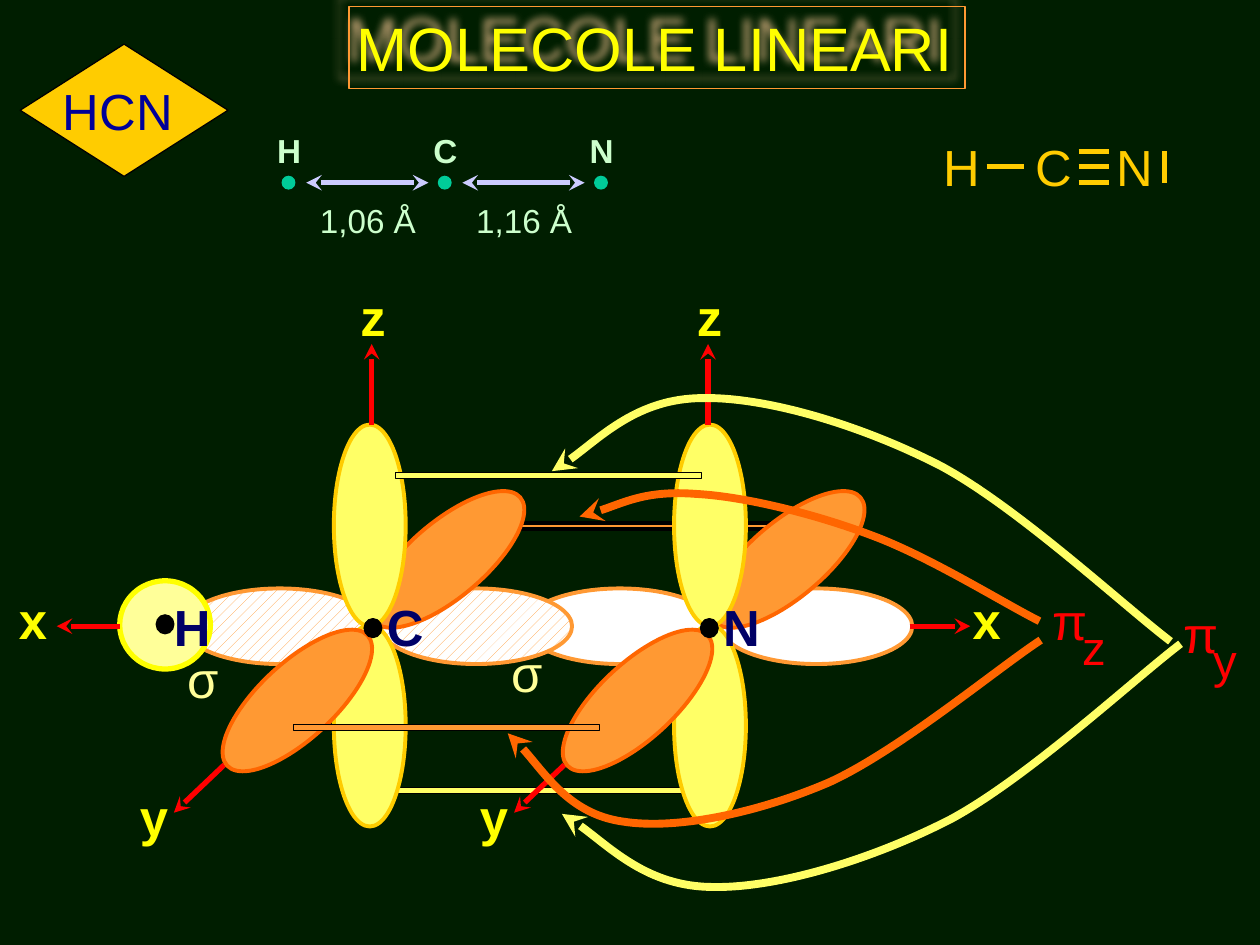
from lxml import etree
from pptx import Presentation
from pptx.dml.color import RGBColor
from pptx.enum.dml import MSO_PATTERN
from pptx.enum.shapes import MSO_CONNECTOR, MSO_SHAPE
from pptx.enum.text import MSO_AUTO_SIZE
from pptx.oxml.ns import qn
from pptx.util import Inches, Pt

RECTANGLE = MSO_SHAPE.RECTANGLE
OVAL = MSO_SHAPE.OVAL
DIAMOND = MSO_SHAPE.FLOWCHART_DECISION
STRAIGHT = MSO_CONNECTOR.STRAIGHT
HATCH = MSO_PATTERN.DASHED_UPWARD_DIAGONAL
GROW = MSO_AUTO_SIZE.SHAPE_TO_FIT_TEXT

# The slide is a grid of 100 columns by 75 rows, all lengths are in cells
COLUMNS, ROWS = 100, 75
YELLOW, GOLD, PALE, LEMON = "FFFF00", "FFCC00", "FFFF66", "FFFF99"
ORANGE, DEEP_ORANGE, RED = "FF9933", "FF6600", "FF0000"
BLACK, WHITE, NAVY, MINT = "000000", "FFFFFF", "000066", "CCFFCC"

# Curve points relative to the arrowhead: start, then three per segment
OUTER_ARC = [(0, 0), (2, 1), (6.8, 5.8), (12, 5.8), (17.1, 5.9), (24.7, 3.6),
             (30.9, 0.4), (37, -2.9), (45.3, -10.6), (49.1, -13.5)]
INNER_LOWER_ARC = [(0, 0), (1.5, 1.2), (4.9, 6.4), (9.1, 7), (13.4, 7.7),
                   (19.9, 6.3), (25.5, 3.9), (31, 1.4), (38.8, -5.1), (42.3, -7.4)]
INNER_UPPER_ARC = [(0, 0), (1.5, -0.3), (5.3, -2.1), (9.2, -1.8), (13.1, -1.6),
                   (18.7, -0.2), (23.2, 1.5), (27.8, 3.2), (33.7, 6.9), (36.5, 8.3)]


def cells(*values):
    return [Inches(value / 10) for value in values]


def color(hex_text):
    return RGBColor.from_string(hex_text)


def set_line(shape, line_color, width, head=False, tail=False):
    shape.line.color.rgb = color(line_color)
    shape.line.width = Pt(width)
    outline = shape.element.spPr.find(qn("a:ln"))
    for present, tag in ((head, "a:headEnd"), (tail, "a:tailEnd")):
        if present:
            etree.SubElement(outline, qn(tag), type="stealth")


def add_shape(slide, kind, box, fill, line_color, width=0.75, rotation=0, hatch=None):
    shape = slide.shapes.add_shape(kind, *cells(*box))
    shape.rotation = rotation
    if hatch:
        shape.fill.patterned()
        shape.fill.pattern = HATCH
        shape.fill.fore_color.rgb = color(hatch)
        shape.fill.back_color.rgb = color(fill)
    else:
        shape.fill.solid()
        shape.fill.fore_color.rgb = color(fill)
    set_line(shape, line_color, width)
    shape.shadow.inherit = False
    return shape


def add_line(slide, start, end, line_color, head=False, tail=False):
    line = slide.shapes.add_connector(STRAIGHT, *cells(*start, *end))
    set_line(line, line_color, 3, head, tail)
    etree.SubElement(line.element.spPr, qn("a:effectLst"))


def add_curve(slide, left, top, points, line_color, flip=1):
    corners = [cells(left + x, top + flip * y) for x, y in points]
    builder = slide.shapes.build_freeform(*corners[0])
    builder.add_line_segments(corners[1:], close=False)
    shape = builder.convert_to_shape()
    shape.fill.background()
    set_line(shape, line_color, 4.5, head=True)
    shape.shadow.inherit = False
    # Each three straight segments become one Bezier segment
    segments = list(shape.element.iter(qn("a:lnTo")))
    for index in range(0, len(segments), 3):
        bezier = etree.Element(qn("a:cubicBezTo"))
        segments[index].addprevious(bezier)
        for segment in segments[index:index + 3]:
            bezier.append(segment[0])
            segment.getparent().remove(segment)


def add_text(slide, text, left, top, width, height=5.5, size=29, text_color=YELLOW, bold=False):
    box = slide.shapes.add_textbox(*cells(left, top, width, height))
    frame = box.text_frame
    frame.word_wrap = False
    frame.auto_size = GROW
    frame.margin_left = frame.margin_right = Inches(0.06)
    frame.margin_top = frame.margin_bottom = Inches(0.03)
    run = frame.paragraphs[0].add_run()
    run.text = text
    run.font.name = "Arial"
    run.font.size = Pt(size)
    run.font.bold = bold
    run.font.color.rgb = color(text_color)
    return box


def add_title(slide, left, top, width, height):
    box = add_text(slide, "MOLECOLE LINEARI", left, top, width, height, size=35)
    set_line(box, ORANGE, 0.75)
    effects = etree.SubElement(box.element.spPr, qn("a:effectLst"))
    shadow = etree.SubElement(effects, qn("a:outerShdw"), blurRad=str(Pt(5)),
                              dist=str(Pt(8.5)), dir=str(225 * 60000))
    tint = etree.SubElement(shadow, qn("a:srgbClr"), val="FFCC99")
    etree.SubElement(tint, qn("a:alpha"), val="75000")


def add_formula_badge(slide, left, top, width, height):
    add_shape(slide, DIAMOND, (left, top, width, height), GOLD, BLACK)
    add_text(slide, "HCN", left + 2.8, top + 2.5, 10, text_color="000099")


def add_bond_lengths(slide, left, top, pitch):
    for index, symbol in enumerate("HCN"):
        x = left + index * pitch
        add_text(slide, symbol, x, top, 3.1, 3.8, 19, MINT, bold=True)
        add_shape(slide, OVAL, (x + 1, top + 4, 1, 1), "00CC99", "00CC99")
    for index, length in enumerate(("1,06 Å", "1,16 Å")):
        x = left + index * pitch
        add_line(slide, (x + 2.9, top + 4.5), (x + 12.6, top + 4.5), "CCCCFF", True, True)
        add_text(slide, length, x + 3.4, top + 5.6, 9, 3.8, 19, MINT)


def add_lewis_structure(slide, left, top):
    for symbol, x in (("H", 0), ("C", 7.3), ("N", 13.7)):
        add_text(slide, symbol, left + x, top, 4.1, text_color=GOLD)
    # Single bond, triple bond and lone pair
    strokes = [(4, 2.7, 7, 2.7), (18.1, 1.5, 18.1, 4)]
    strokes += [(11.3, y, 13.7, y) for y in (1.5, 2.7, 4)]
    for x1, y1, x2, y2 in strokes:
        add_line(slide, (left + x1, top + y1), (left + x2, top + y2), GOLD)


def add_atom(slide, symbol, left, axis, top, hatch=None):
    """Lobes hang on left, the vertical axis and its labels on axis."""
    # Lobes along x, behind along y, then along z
    for x in (8.7, 24.3):
        add_shape(slide, OVAL, (left + x, top + 19.7, 6, 15.2), WHITE, ORANGE, 2.25, 270, hatch)
    add_shape(slide, OVAL, (left + 22, top + 14.4, 6, 15.2), ORANGE, DEEP_ORANGE, 2.25, 49.7)
    for y in (11.3, 27.2):
        add_shape(slide, OVAL, (left + 16, top + y, 5.7, 16), PALE, GOLD, 2.25)
    # Axes
    add_line(slide, (axis, top + 11.3), (axis, top + 4.9), RED, tail=True)
    add_line(slide, (left + 7.3, top + 38.3), (left + 3.3, top + 42.1), RED, tail=True)
    # Front lobe along y, nucleus and labels
    add_shape(slide, OVAL, (left + 10.1, top + 25.6, 6, 15.2), ORANGE, DEEP_ORANGE, 2.25, 47.1)
    add_shape(slide, OVAL, (axis - 0.6, top + 26.7, 1.4, 1.5), BLACK, BLACK)
    add_text(slide, "z", axis - 1.5, top, 3.2, bold=True)
    add_text(slide, "y", left, top + 39.7, 3.6, bold=True)
    add_text(slide, symbol, axis + 0.6, top + 24.6, 4.1, text_color=NAVY, bold=True)


def add_hydrogen(slide, left, top, width, height):
    shell = add_shape(slide, OVAL, (left, top, width, height), LEMON, YELLOW, 3)
    nucleus = add_shape(slide, OVAL, (left + 2.9, top + 2.7, 1.4, 1.5), BLACK, BLACK)
    slide.shapes.add_group_shape([shell, nucleus])
    add_text(slide, "H", left + 3.7, top + 0.9, 4.1, text_color=NAVY, bold=True)


def add_x_axis(slide, top):
    for start, end, label in ((9.5, 4.5, 0.9), (72.2, 77, 76.6)):
        add_line(slide, (start, top), (end, top), RED, tail=True)
        add_text(slide, "x", label, top - 3.3, 3.4, bold=True)


def add_pi_bar(slide, left, top, fill, width=0.75):
    add_shape(slide, RECTANGLE, (left, top, 24.3, 0.5), fill, BLACK, width)


def add_pi_label(slide, left, top, subscript, line_color, arcs):
    for x, y, points, flip in arcs:
        add_curve(slide, left + x, top + y, points, line_color, flip)
    add_text(slide, "π", left, top, 3.4, text_color=RED)
    add_text(slide, subscript, left + 2.4, top + 2.3, 3.1, 5.1, 27, RED)


def main():
    presentation = Presentation()
    presentation.slide_width, presentation.slide_height = cells(COLUMNS, ROWS)
    slide = presentation.slides.add_slide(presentation.slide_layouts[6])
    slide.background.fill.solid()
    slide.background.fill.fore_color.rgb = color("001E00")

    # Header
    add_title(slide, 27.7, 0.5, 48.9, 6.5)
    add_formula_badge(slide, 1.6, 3.5, 16.5, 10.5)
    add_bond_lengths(slide, 21.4, 10, 12.4)
    add_lewis_structure(slide, 74.3, 10.5)

    # Orbitals, between the rear and the front pi bars
    add_pi_bar(slide, 30.5, 62.5, PALE)
    add_pi_bar(slide, 40, 41.5, ORANGE, 2.25)
    add_atom(slide, "N", 37.5, 56.2, 22.4)
    add_atom(slide, "C", 10.5, 29.5, 22.4, hatch=ORANGE)
    add_hydrogen(slide, 9.5, 46.1, 7.2, 7)
    add_x_axis(slide, 49.7)
    for left, top in ((14.3, 51.1), (40, 50.6)):
        add_text(slide, "σ", left, top, 3.7, text_color=LEMON)
    add_pi_bar(slide, 23.3, 57.5, ORANGE)
    add_pi_bar(slide, 31.4, 37.5, PALE)

    # Pi bond labels with their pointers
    add_pi_label(slide, 93.3, 47.5, "y", PALE,
                 [(-48.7, 17.1, OUTER_ARC, 1), (-49.5, -10.1, OUTER_ARC, -1)])
    add_pi_label(slide, 82.9, 46.5, "z", DEEP_ORANGE,
                 [(-42.6, 11.7, INNER_LOWER_ARC, 1), (-36.9, -5.5, INNER_UPPER_ARC, 1)])
    presentation.save("out.pptx")


if __name__ == "__main__":
    main()
